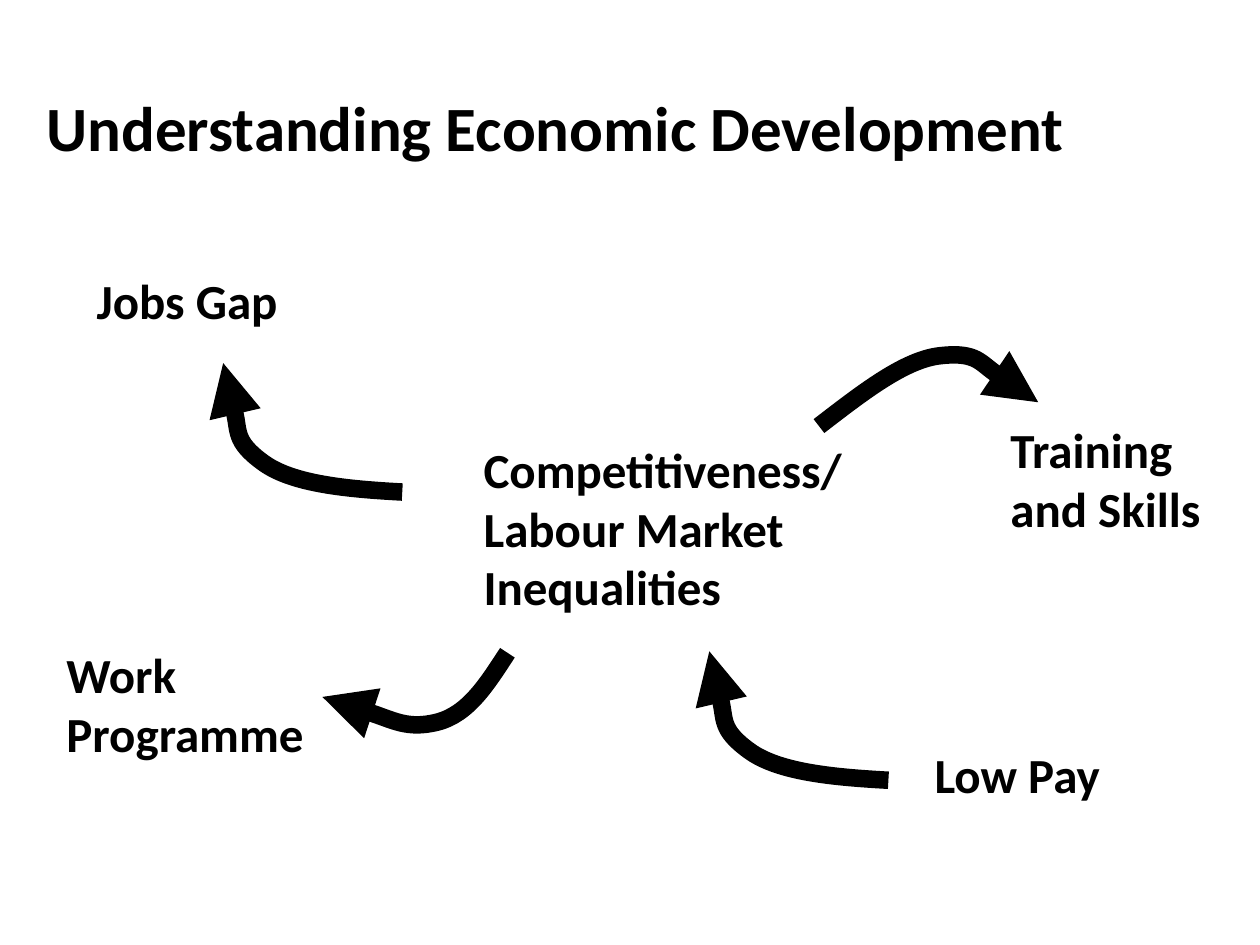
from lxml.etree import SubElement
from pptx import Presentation
from pptx.dml.color import RGBColor
from pptx.enum.text import MSO_ANCHOR
from pptx.oxml.ns import qn
from pptx.util import Cm, Pt

BLACK = RGBColor(0, 0, 0)
FONT = "Calibri"

# Each curve: a start point, then three points per Bezier segment (cm)
HOOK = [(3.61, 2.6), (2.51, 2.54), (1.4, 2.44), (0.81, 2.01),
        (0.2, 1.57), (0.13, 0.36), (0, 0)]
ARCH = [(0, 1.5), (0.86, 0.84), (1.73, 0.15), (2.46, 0.08),
        (3.2, 0), (4.09, 0.86), (4.42, 1.02)]
SWOOP = [(3.73, 0), (3.33, 0.61), (2.95, 1.24), (2.31, 1.4),
         (1.7, 1.55), (0.38, 0.99), (0, 0.89)]

# Left, top, width, height (cm) within the diagram
LABELS = [
    ("Jobs Gap", 1.7, 0, 11.1, 1.45),
    ("Training and Skills", 20.12, 3, 5.28, 2.64),
    ("Competitiveness/Labour Market Inequalities", 9.5, 3.4, 9.6, 3.84),
    ("Work Programme", 1.09, 7.54, 6.2, 2.64),
    ("Low Pay", 18.59, 9.55, 8.1, 1.45),
]
ARROWS = [(HOOK, 4.5, 1.99), (ARCH, 16.51, 1.76),
          (SWOOP, 6.5, 7.83), (HOOK, 14.3, 7.8)]


def add_text(slide, text, box, size=28, anchor=MSO_ANCHOR.TOP):
    frame = slide.shapes.add_textbox(*map(Cm, box)).text_frame
    frame.word_wrap = True
    frame.vertical_anchor = anchor
    run = frame.paragraphs[0].add_run()
    run.text = text
    font = run.font
    font.name, font.size, font.bold = FONT, Pt(size), True
    font.color.rgb = BLACK


def add_arrow(slide, curve, left, top):
    pts = [(Cm(left + x), Cm(top + y)) for x, y in curve]
    pen = slide.shapes.build_freeform(*pts[0])
    pen.add_line_segments(pts[1:], close=False)
    shape = pen.convert_to_shape()
    shape.shadow.inherit = False
    shape.fill.background()
    shape.line.color.rgb = BLACK
    shape.line.width = Pt(10)

    # Turn every three line points into one Bezier segment
    track = next(shape._element.iter(qn("a:path")))
    lines = track.findall(qn("a:lnTo"))
    for i in range(0, len(lines), 3):
        bend = SubElement(track, qn("a:cubicBezTo"))
        for line in lines[i:i + 3]:
            bend.append(line[0])
            track.remove(line)

    # Arrowhead at the end of the curve
    SubElement(shape.line._get_or_add_ln(), qn("a:tailEnd"), type="triangle")


def add_title(slide, box):
    add_text(slide, "Understanding Economic Development", box,
             size=36, anchor=MSO_ANCHOR.MIDDLE)


def add_diagram(slide, left, top):
    for curve, x, y in ARROWS:
        add_arrow(slide, curve, left + x, top + y)
    for text, x, y, wide, high in LABELS:
        add_text(slide, text, (left + x, top + y, wide, high))


def main():
    deck = Presentation()
    deck.slide_width, deck.slide_height = Cm(25.4), Cm(19.05)
    slide = deck.slides.add_slide(deck.slide_layouts[6])
    add_title(slide, (0.69, 0.63, 22.86, 3.84))
    add_diagram(slide, 0, 5.33)
    deck.save("out.pptx")


if __name__ == "__main__":
    main()
